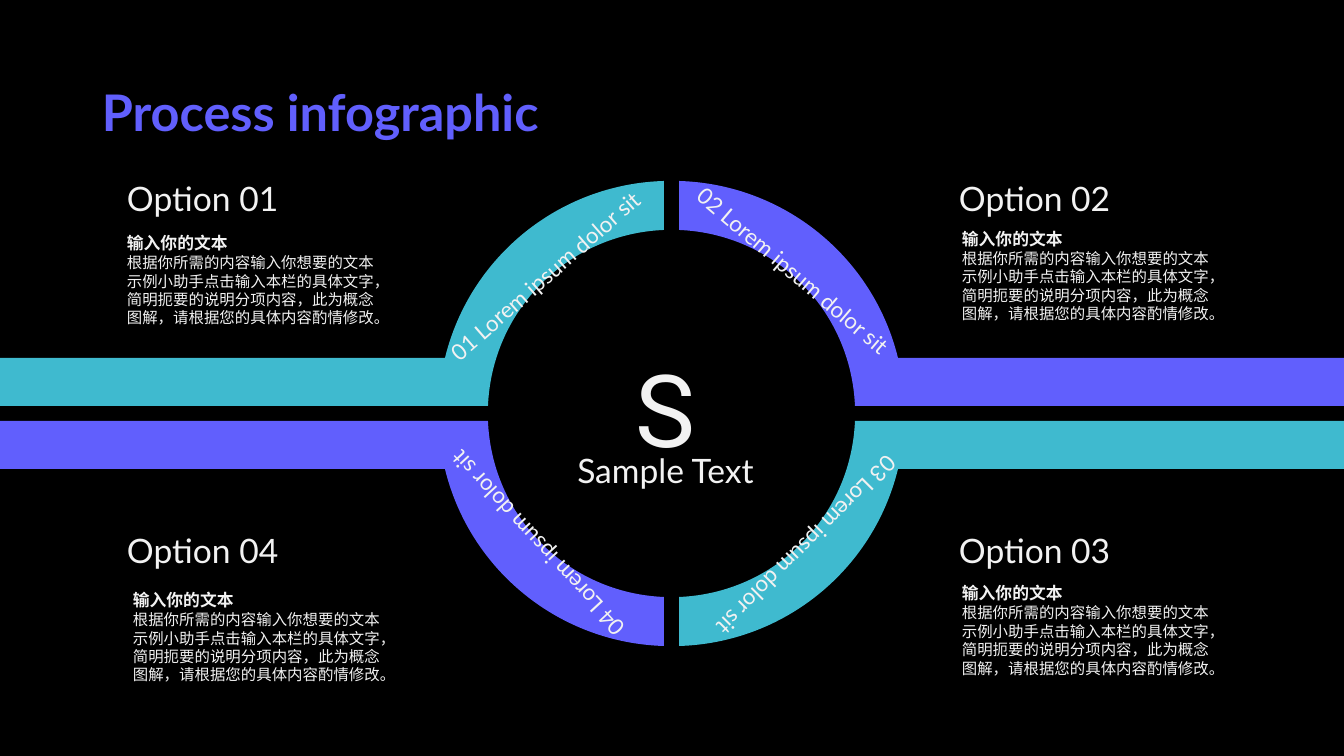
from math import acos, asin, cos, sin, tan

from lxml import etree
from pptx import Presentation
from pptx.dml.color import RGBColor
from pptx.enum.shapes import MSO_SHAPE
from pptx.enum.text import MSO_ANCHOR, PP_ALIGN
from pptx.oxml.ns import qn
from pptx.util import Pt

RECT = MSO_SHAPE.RECTANGLE
TOP, MIDDLE = MSO_ANCHOR.TOP, MSO_ANCHOR.MIDDLE
LEFT, CENTER = PP_ALIGN.LEFT, PP_ALIGN.CENTER

PX = 914400 / 100.8
WIDE, HIGH = 1344, 756
COLORS = {"back": "000000", "teal": "3FBACF", "violet": "615FFD", "text": "F2F2F2"}
LATO, ROBOTO, NOTO = "Lato", "Roboto", "Noto Sans CJK SC"

TITLE = "Process infographic"
LETTER, CAPTION = "S", "Sample Text"
LABEL = "Lorem ipsum dolor sit "
HEAD = "输入你的文本"
BODY = [
    "根据你所需的内容输入你想要的文本",
    "示例小助手点击输入本栏的具体文字，简明扼要的说明分项内容，此为概念图解，请根据您的具体内容酌情修改。",
]

# number, side (x, y), color, label corner, label angle, option corner, note corner
OPTIONS = [
    ("01", (-1, -1), "teal", (467, 211), 318.9, (114, 165), (117, 228)),
    ("02", (1, -1), "violet", (480, 211), 40.4, (946, 165), (952, 224)),
    ("03", (1, 1), "teal", (479, 222), 135, (946, 517), (952, 578)),
    ("04", (-1, 1), "violet", (469, 221), 227.2, (114, 517), (123, 585)),
]

MID_X, MID_Y = 671.5, 413.5
OUTER, INNER = 233, 184
GAP, BAND = 7.5, 48
REACH = 412.5
PAD = (13, 5, 13, 7)


def emu(n):
    return round(n * PX)


def rgb(name):
    return RGBColor.from_string(COLORS[name])


def paint(shape, color):
    shape.shadow.inherit = False
    shape.fill.solid()
    shape.fill.fore_color.rgb = rgb(color)
    shape.line.fill.background()


def arc(radius, start, end):
    """Give the start, two handles and end of a Bezier arc."""
    k = 4 / 3 * tan((end - start) / 4)
    return [(radius * (cos(a) - h * sin(a)), radius * (sin(a) + h * cos(a)))
            for a, h in ((start, 0), (start, k), (end, -k), (end, 0))]


def bend(shape, firsts):
    """Turn three line steps from each given index into one curve."""
    steps = list(shape._element.iter(qn("a:lnTo")))
    for first in firsts:
        curve = etree.Element(qn("a:cubicBezTo"))
        steps[first].addprevious(curve)
        for step in steps[first:first + 3]:
            curve.append(step[0])
            step.getparent().remove(step)


def add_arm(slide, side, color):
    """Draw a quarter ring with its band, and the bar that runs to the slide edge."""
    far = GAP + BAND
    outline = arc(OUTER, acos(GAP / OUTER), asin(far / OUTER))
    outline += [(REACH, far), (REACH, GAP)]
    outline += arc(INNER, asin(GAP / INNER), acos(GAP / INNER))
    points = [(MID_X + side[0] * x, MID_Y + side[1] * y) for x, y in outline]

    group = slide.shapes.add_group_shape()
    pen = group.shapes.build_freeform(*points[0], scale=PX)
    pen.add_line_segments(points[1:], close=True)
    ring = pen.convert_to_shape()
    bend(ring, (0, 6))
    paint(ring, color)

    join = MID_X + side[0] * REACH
    left, right = (0, join) if side[0] < 0 else (join, WIDE)
    top = MID_Y + (GAP if side[1] > 0 else -far)
    bar = group.shapes.add_shape(RECT, emu(left), emu(top), emu(right - left), emu(BAND))
    paint(bar, color)


def add_text(slide, box, lines, font=LATO, color="text", align=LEFT,
             space=None, pad=None, wrap=True, anchor=TOP):
    """Add a text box; lines holds (text, size, bold) for each paragraph."""
    shape = slide.shapes.add_textbox(*map(emu, box))
    frame = shape.text_frame
    frame.word_wrap = wrap
    frame.vertical_anchor = anchor
    if pad:
        (frame.margin_left, frame.margin_top,
         frame.margin_right, frame.margin_bottom) = map(emu, pad)
    for i, (text, size, bold) in enumerate(lines):
        para = frame.add_paragraph() if i else frame.paragraphs[0]
        para.text = text
        para.alignment = align
        para.line_spacing = space
        para.font.size = Pt(size)
        para.font.bold = bold
        para.font.color.rgb = rgb(color)
        para.font.name = font
        props = para._p.find(".//" + qn("a:defRPr"))
        etree.SubElement(props, qn("a:ea")).set("typeface", font)
    return shape


def main():
    deck = Presentation()
    deck.slide_width, deck.slide_height = emu(WIDE), emu(HIGH)
    slide = deck.slides.add_slide(deck.slide_layouts[6])
    slide.background.fill.solid()
    slide.background.fill.fore_color.rgb = rgb("back")

    for _, side, color, *_ in OPTIONS:
        add_arm(slide, side, color)

    note = [(HEAD, 12, True)] + [(line, 11, False) for line in BODY]
    for num, _, _, label, angle, option, corner in OPTIONS:
        tag = add_text(slide, (*label, 397, 397), [(f"{num} {LABEL}", 16, False)],
                       align=CENTER, wrap=False)
        tag.rotation = angle
        add_text(slide, (*option, 337, 60), [(f"Option {num}", 24, False)],
                 space=1.2, pad=PAD)
        add_text(slide, (*corner, 273, 124), note, font=NOTO)

    add_text(slide, (540, 437, 251, 60), [(CAPTION, 24, False)],
             align=CENTER, space=1.2, pad=PAD)
    add_text(slide, (540, 318, 251, 158), [(LETTER, 72, False)], font=ROBOTO,
             align=CENTER, space=1.2, pad=PAD)
    add_text(slide, (92, 81, 1159, 69), [(TITLE, 36, True)], color="violet",
             space=0.9, anchor=MIDDLE)
    deck.save("out.pptx")


if __name__ == "__main__":
    main()
